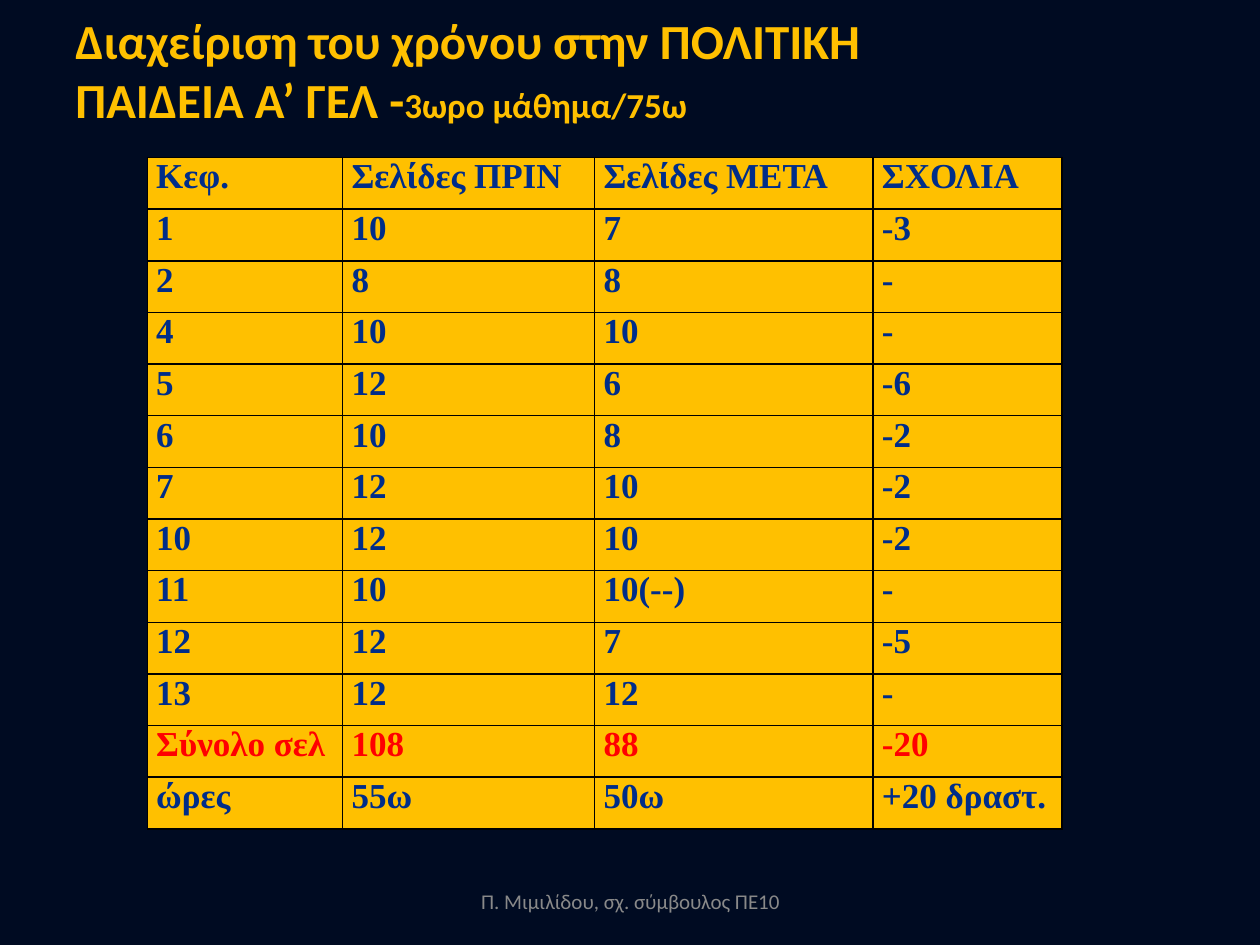
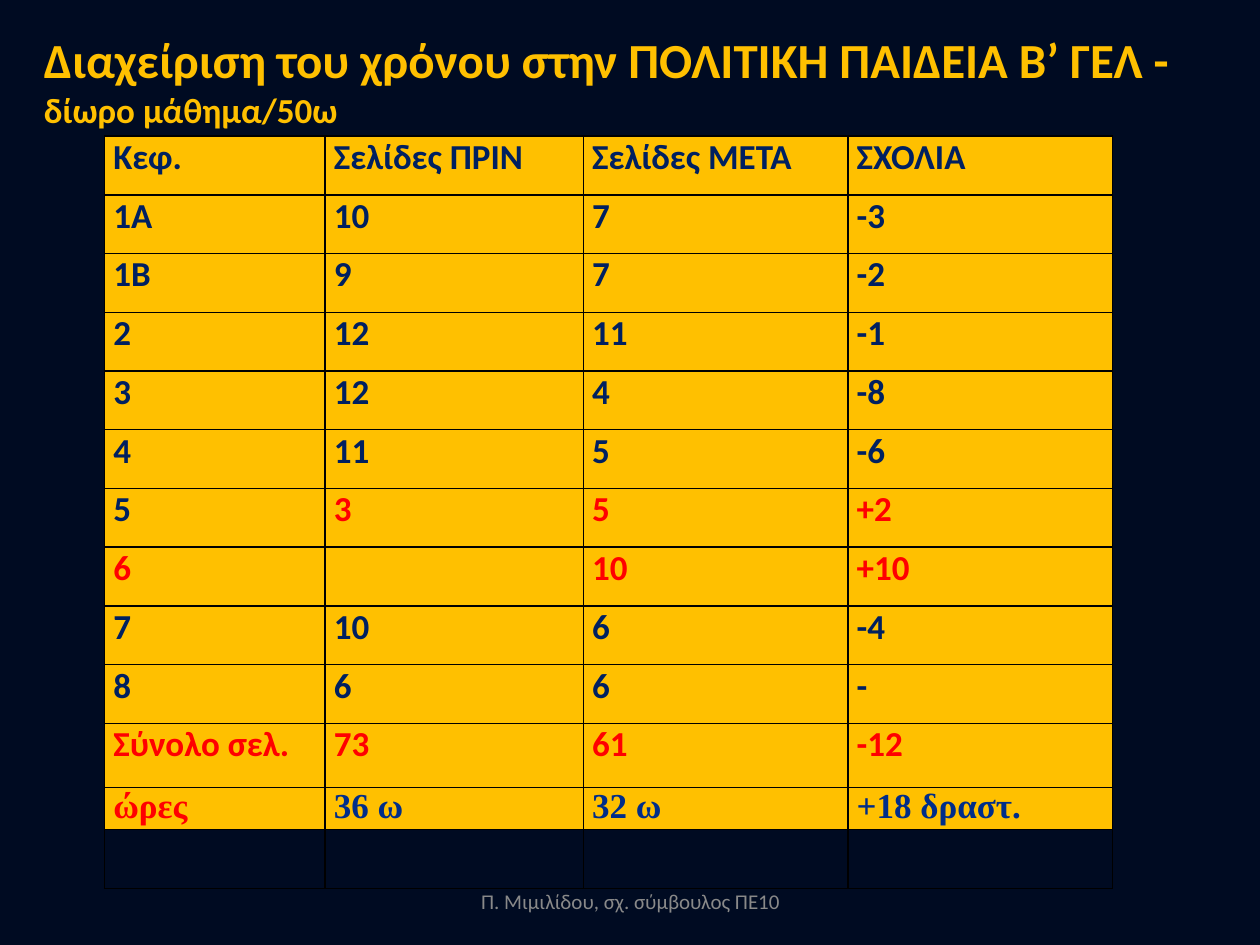
from itertools import product

from lxml.etree import SubElement
from pptx import Presentation
from pptx.dml.color import RGBColor
from pptx.enum.text import MSO_ANCHOR as Anchor, PP_ALIGN as Align
from pptx.oxml.ns import qn
from pptx.util import Inches, Pt

BACKGROUND, GOLD, BLACK = "000B22", "FFC000", "000000"
BLUE, NAVY, RED, GREY = "002D89", "002060", "FF0000", "898989"
SANS, SERIF = "Calibri", "Times New Roman"
HEADINGS = ["Κεφ.", "Σελίδες ΠΡΙΝ", "Σελίδες ΜΕΤΑ", "ΣΧΟΛΙΑ"]
FOOTER = "Π. Μιμιλίδου, σχ. σύμβουλος ΠΕ10"
FOOTER_BOX = (3.42, 6.95, 3.17, 0.4)

FIRST_ROWS = [
    HEADINGS,
    ["1", "10", "7", "-3"],
    ["2", "8", "8", "-"],
    ["4", "10", "10", "-"],
    ["5", "12", "6", "-6"],
    ["6", "10", "8", "-2"],
    ["7", "12", "10", "-2"],
    ["10", "12", "10", "-2"],
    ["11", "10", "10(--)", "-"],
    ["12", "12", "7", "-5"],
    ["13", "12", "12", "-"],
    ["Σύνολο σελ", "108", "88", "-20"],
    ["ώρες", "55ω", "50ω", "+20 δραστ."],
]
SECOND_ROWS = [
    HEADINGS,
    ["1Α", "10", "7", "-3"],
    ["1Β", "9", "7", "-2"],
    ["2", "12", "11", "-1"],
    ["3", "12", "4", "-8"],
    ["4", "11", "5", "-6"],
    ["5", "3", "5", "+2"],
    ["6", "", "10", "+10"],
    ["7", "10", "6", "-4"],
    ["8", "6", "6", "-"],
    ["Σύνολο σελ.", "73", "61", "-12"],
    ["ώρες", "36 ω", "32 ω", "+18 δραστ."],
    [""] * 4,
]


def rgb(value):
    return RGBColor.from_string(value)


def add_span(para, text, size=20, font=SANS, color=GOLD, bold=True):
    span = para.add_run()
    span.text = text
    span.font.size = Pt(size)
    span.font.name = font
    span.font.color.rgb = rgb(color)
    span.font.bold = bold


def add_text_frame(page, box, wrap=True):
    frame = page.shapes.add_textbox(*map(Inches, box)).text_frame
    frame.word_wrap = wrap
    frame.vertical_anchor = Anchor.MIDDLE
    return frame


def add_title(page, box, title, detail, detail_below=False):
    """Write the title, with its smaller detail on the same line or below it."""
    frame = add_text_frame(page, box, wrap=not detail_below)
    para = frame.paragraphs[0]
    add_span(para, title, size=28)
    add_span(frame.add_paragraph() if detail_below else para, detail)


def add_footer(page):
    para = add_text_frame(page, FOOTER_BOX).paragraphs[0]
    para.alignment = Align.CENTER
    add_span(para, FOOTER, size=12, color=GREY, bold=False)


def add_borders(cell):
    properties = cell._tc.get_or_add_tcPr()
    for side in ("lnL", "lnR", "lnT", "lnB"):
        line = SubElement(properties, qn(f"a:{side}"), w=str(Pt(1)))
        fill = SubElement(line, qn("a:solidFill"))
        SubElement(fill, qn("a:srgbClr"), val=BLACK)


def add_page_table(page, box, rows, widths, base, formats, heights):
    """Fill the box with rows; heights names the rows that differ from the rest."""
    table = page.shapes.add_table(len(rows), len(widths), *map(Inches, box)).table
    table.first_row = table.horz_banding = False
    for column, width in zip(table.columns, widths):
        column.width = Inches(width)
    even_height = (box[3] - sum(heights.values())) / (len(rows) - len(heights))
    for index, (row, texts) in enumerate(zip(table.rows, rows)):
        row.height = Inches(heights.get(index, even_height))
        for place, (cell, text) in enumerate(zip(row.cells, texts)):
            cell.margin_left = cell.margin_right = Inches(0.07)
            cell.margin_top = cell.margin_bottom = 0
            add_borders(cell)
            if any(texts):
                cell.fill.solid()
                cell.fill.fore_color.rgb = rgb(GOLD)
            else:
                cell.fill.background()
            if text:
                style = base | formats.get((index, place), {})
                add_span(cell.text_frame.paragraphs[0], text, **style)


def add_page(deck, title, table):
    page = deck.slides.add_slide(deck.slide_layouts[6])
    page.background.fill.solid()
    page.background.fill.fore_color.rgb = rgb(BACKGROUND)
    add_page_table(page, **table)
    add_title(page, **title)
    add_footer(page)


def main():
    deck = Presentation()
    deck.slide_width, deck.slide_height = Inches(10), Inches(7.5)

    add_page(
        deck,
        title=dict(box=(0.5, 0.03, 7.75, 1.04), detail="3ωρο μάθημα/75ω",
                   title="Διαχείριση του χρόνου στην ΠΟΛΙΤΙΚΗ ΠΑΙΔΕΙΑ Α’ ΓΕΛ -"),
        table=dict(box=(1.17, 1.25, 7.25, 5.33), rows=FIRST_ROWS,
                   widths=(1.55, 2, 2.21, 1.5), heights={},
                   base=dict(font=SERIF, color=BLUE),
                   formats={(11, place): dict(color=RED) for place in range(4)}),
    )

    red_cells = [(6, 1), (6, 2), (6, 3), *product((7, 10), range(4))]
    formats = {place: dict(color=RED) for place in red_cells}
    for place, color in enumerate((RED, BLUE, BLUE, BLUE)):
        formats[11, place] = dict(font=SERIF, color=color)
    add_page(
        deck,
        title=dict(box=(0.25, 0.18, 9.23, 0.91), detail="δίωρο μάθημα/50ω",
                   title="Διαχείριση του χρόνου στην ΠΟΛΙΤΙΚΗ ΠΑΙΔΕΙΑ Β’ ΓΕΛ -",
                   detail_below=True),
        table=dict(box=(0.83, 1.08, 8, 5.97), rows=SECOND_ROWS,
                   widths=(1.75, 2.05, 2.1, 2.1), heights={10: 0.51, 11: 0.33},
                   base=dict(color=NAVY), formats=formats),
    )
    deck.save("out.pptx")


if __name__ == "__main__":
    main()
